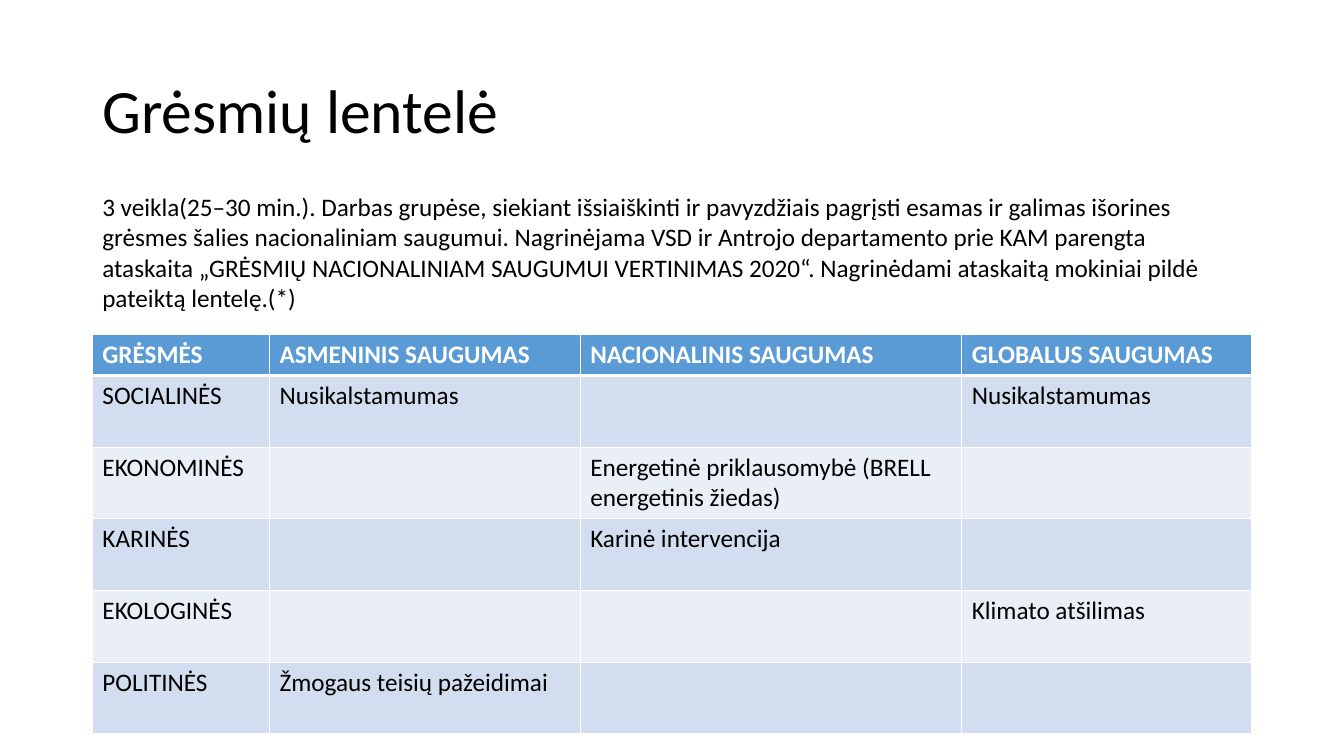
from dataclasses import dataclass

from lxml.etree import SubElement
from pptx import Presentation
from pptx.dml.color import RGBColor
from pptx.enum.text import MSO_ANCHOR, PP_ALIGN
from pptx.oxml.ns import qn
from pptx.util import Pt


@dataclass(frozen=True)
class Theme:
    font: str = "Calibri"
    title_size: int = 44
    text_size: int = 18
    ink: str = "000000"
    white: str = "FFFFFF"
    header: str = "5B9BD5"
    bands: tuple = ("D2DEEF", "EAEFF7")


THEME = Theme()
LEFT, WIDTH = 66, 828
COLUMN_WIDTHS = (126.5, 222, 272.5, 207)
HEADER_HEIGHT, ROW_HEIGHT = 29.2, 51.2

TITLE = "Grėsmių lentelė"
TASK = (
    "3 veikla(25–30 min.). Darbas grupėse, siekiant išsiaiškinti ir pavyzdžiais "
    "pagrįsti esamas ir galimas išorines grėsmes šalies nacionaliniam saugumui. "
    "Nagrinėjama VSD ir Antrojo departamento prie KAM parengta ataskaita "
    "„GRĖSMIŲ NACIONALINIAM SAUGUMUI VERTINIMAS 2020“. Nagrinėdami ataskaitą "
    "mokiniai pildė pateiktą lentelę.(*)"
)
THREATS = (
    ("GRĖSMĖS", "ASMENINIS SAUGUMAS", "NACIONALINIS SAUGUMAS", "GLOBALUS SAUGUMAS"),
    ("SOCIALINĖS", "Nusikalstamumas", "", "Nusikalstamumas"),
    ("EKONOMINĖS", "", "Energetinė priklausomybė (BRELL energetinis žiedas)", ""),
    ("KARINĖS", "", "Karinė intervencija", ""),
    ("EKOLOGINĖS", "", "", "Klimato atšilimas"),
    ("POLITINĖS", "Žmogaus teisių pažeidimai", "", ""),
)


def write(frame, text, size, color, bold=False):
    frame.text = text
    para = frame.paragraphs[0]
    para.alignment = PP_ALIGN.LEFT
    font = para.font
    font.name, font.size, font.bold = THEME.font, Pt(size), bold
    font.color.rgb = RGBColor.from_string(color)
    return para


def add_title(page):
    title = page.shapes.title
    title.left, title.top, title.width, title.height = Pt(LEFT), Pt(28.8), Pt(WIDTH), Pt(104.4)
    title.text_frame.vertical_anchor = MSO_ANCHOR.MIDDLE
    para = write(title.text_frame, TITLE, THEME.title_size, THEME.ink)
    para.line_spacing = 0.9


def add_task(page):
    box = page.shapes.add_textbox(Pt(LEFT), Pt(133.2), Pt(WIDTH), Pt(94.3))
    box.text_frame.word_wrap = True
    write(box.text_frame, TASK, THEME.text_size, THEME.ink)


def set_borders(cell, top, bottom):
    # Borders must stand before the fill in the cell properties
    properties = cell._tc.get_or_add_tcPr()
    for side, width in (("L", 1), ("R", 1), ("T", top), ("B", bottom)):
        line = SubElement(properties, qn(f"a:ln{side}"), w=str(Pt(width)))
        fill = SubElement(line, qn("a:solidFill"))
        SubElement(fill, qn("a:srgbClr"), val=THEME.white)


def add_threat_table(page):
    height = HEADER_HEIGHT + ROW_HEIGHT * (len(THREATS) - 1)
    table = page.shapes.add_table(
        len(THREATS), len(COLUMN_WIDTHS), Pt(LEFT), Pt(239), Pt(WIDTH), Pt(height)
    ).table
    for column, width in zip(table.columns, COLUMN_WIDTHS):
        column.width = Pt(width)
    for r, texts in enumerate(THREATS):
        is_header = r == 0
        table.rows[r].height = Pt(HEADER_HEIGHT if is_header else ROW_HEIGHT)
        fill = THEME.header if is_header else THEME.bands[(r - 1) % 2]
        color = THEME.white if is_header else THEME.ink
        for c, text in enumerate(texts):
            cell = table.cell(r, c)
            set_borders(cell, top=3 if r == 1 else 1, bottom=3 if is_header else 1)
            cell.fill.solid()
            cell.fill.fore_color.rgb = RGBColor.from_string(fill)
            write(cell.text_frame, text, THEME.text_size, color, bold=is_header)


def main():
    deck = Presentation()
    deck.slide_width, deck.slide_height = Pt(960), Pt(540)
    page = deck.slides.add_slide(deck.slide_layouts[5])  # Title Only
    add_title(page)
    add_threat_table(page)
    add_task(page)
    deck.save("out.pptx")


if __name__ == "__main__":
    main()
